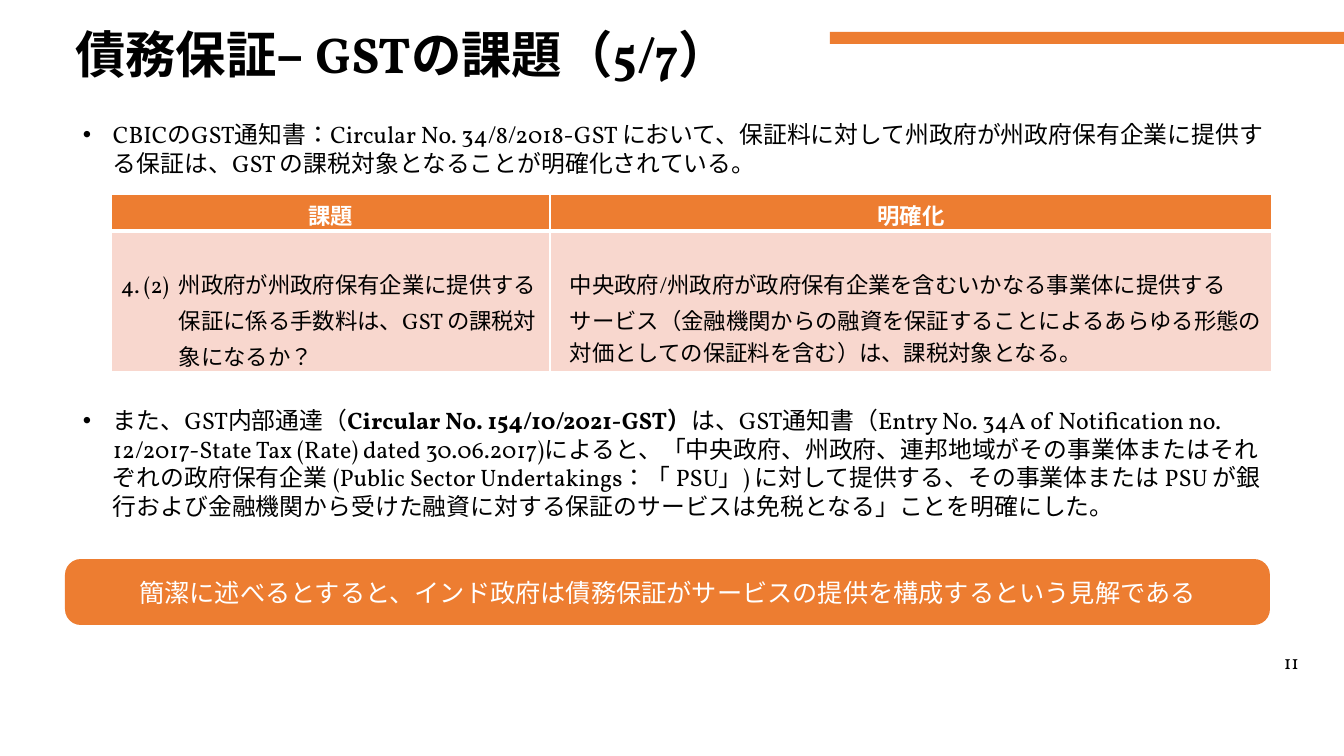
from lxml import etree
from pptx import Presentation
from pptx.dml.color import RGBColor
from pptx.enum.lang import MSO_LANGUAGE_ID
from pptx.enum.shapes import MSO_SHAPE
from pptx.enum.text import MSO_ANCHOR, PP_ALIGN
from pptx.oxml.ns import qn
from pptx.util import Pt

CENTER = PP_ALIGN.CENTER
LEFT = PP_ALIGN.LEFT
MIDDLE = MSO_ANCHOR.MIDDLE
TOP = MSO_ANCHOR.TOP
RECT = MSO_SHAPE.RECTANGLE
ROUNDED = MSO_SHAPE.ROUNDED_RECTANGLE
JAPANESE = MSO_LANGUAGE_ID.JAPANESE

# Content: text is a list of (words, bold) runs
TITLE = [("債務保証– GSTの課題（5/7）", True)]
POINTS = [
    (115, 80, [("CBICのGST通知書：Circular No. 34/8/2018-GST において、保証料に対して州政府が"
                "州政府保有企業に提供する保証は、GST の課税対象となることが明確化されている。", False)]),
    (401, 135, [("また、GST内部通達（", False),
                ("Circular No. 154/10/2021-GST）", True),
                ("は、GST通知書（Entry No. 34A of Notification no. 12/2017-State Tax (Rate) dated "
                 "30.06.2017)によると、「中央政府、州政府、連邦地域がその事業体またはそれぞれの政府保有企業 "
                 "(Public Sector Undertakings：「 PSU」) に対して提供する、その事業体または PSU が銀行および"
                 "金融機関から受けた融資に対する保証のサービスは免税となる」ことを明確にした。", False)]),
]
HEADINGS = ["課題", "明確化"]
ISSUE = "4. (2) \t州政府が州政府保有企業に提供する保証に係る手数料は、GST の課税対象になるか？"
CLARIFICATION = ("中央政府/州政府が政府保有企業を含むいかなる事業体に提供するサービス（金融機関からの融資を"
                 "保証することによるあらゆる形態の対価としての保証料を含む）は、課税対象となる。")
SUMMARY = "簡潔に述べるとすると、インド政府は債務保証がサービスの提供を構成するという見解である"
PAGE = "11"

FONT = "Vollkorn"
ORANGE, PINK, BLACK, WHITE = "ED7D31", "F8D7CE", "000000", "FFFFFF"
COLUMNS = [439, 722]
ROWS = [36, 141]


def px(n):
    return round(n * 914400 / 100.8)


def color(hex_code):
    return RGBColor.from_string(hex_code)


def write(frame, runs, size=17, ink=BLACK, align=LEFT, anchor=TOP, margins=(0, 0, 0, 0),
          spacing=None, left=0, hanging=0, bullet=None):
    """Fill a text frame with one formatted paragraph."""
    frame.word_wrap = True
    frame.vertical_anchor = anchor
    (frame.margin_left, frame.margin_top,
     frame.margin_right, frame.margin_bottom) = map(px, margins)
    paragraph = frame.paragraphs[0]
    paragraph.alignment = align
    if spacing:
        paragraph.line_spacing = spacing
    properties = paragraph._p.get_or_add_pPr()
    properties.set("marL", str(px(left)))
    properties.set("indent", str(-px(hanging)))
    if bullet:
        etree.SubElement(properties, qn("a:buFont")).set("typeface", "Arial")
        etree.SubElement(properties, qn("a:buChar")).set("char", bullet)
    for words, bold in runs:
        run = paragraph.add_run()
        run.text = words
        font = run.font
        font.name, font.size, font.bold = FONT, Pt(size), bold
        font.color.rgb = color(ink)
        font.language_id = JAPANESE


def add_block(kind, x, y, w, h):
    block = slide.shapes.add_shape(kind, px(x), px(y), px(w), px(h))
    block.shadow.inherit = False
    block.fill.solid()
    block.fill.fore_color.rgb = color(ORANGE)
    block.line.fill.background()
    return block


def add_text(x, y, w, h, runs, **style):
    box = slide.shapes.add_textbox(px(x), px(y), px(w), px(h))
    write(box.text_frame, runs, **style)


def style_cell(cell, fill, bottom):
    """Set the fill and the white borders; bottom is the lower border in points."""
    cell.fill.solid()
    cell.fill.fore_color.rgb = color(fill)
    properties = cell._tc.get_or_add_tcPr()
    for place, (side, width) in enumerate([("L", 1), ("R", 1), ("T", 1), ("B", bottom)]):
        border = etree.Element(qn("a:ln" + side), w=str(Pt(width)))
        solid = etree.SubElement(border, qn("a:solidFill"))
        etree.SubElement(solid, qn("a:srgbClr")).set("val", WHITE)
        properties.insert(place, border)


presentation = Presentation()
presentation.slide_width, presentation.slide_height = px(1344), px(756)
slide = presentation.slides.add_slide(presentation.slide_layouts[5])

# Title and accent bar
title = slide.shapes.title
title.left, title.top, title.width, title.height = px(65), px(1), px(1159), px(112)
write(title.text_frame, TITLE, size=36, anchor=MIDDLE, margins=(10, 5, 10, 5), spacing=0.9)
add_block(RECT, 830, 32, 514, 12)

# Bulleted points
for top, height, runs in POINTS:
    add_text(73, top, 1204, height, runs, margins=(10, 5, 10, 5), spacing=Pt(20.4),
             left=30, hanging=30, bullet="•")

# Issue table
table = slide.shapes.add_table(2, 2, px(111), px(194), px(sum(COLUMNS)), px(sum(ROWS))).table
for column, width in zip(table.columns, COLUMNS):
    column.width = px(width)
for row, height in zip(table.rows, ROWS):
    row.height = px(height)


def fill_cell(row, column, words, fill, bottom, bold=False, **style):
    cell = table.cell(row, column)
    write(cell.text_frame, [(words, bold)], size=16, **style)
    cell.margin_left = cell.margin_right = px(10)
    cell.margin_top, cell.margin_bottom = px(5 + 32 * row), px(5)
    style_cell(cell, fill, bottom)


for index, heading in enumerate(HEADINGS):
    fill_cell(0, index, heading, ORANGE, 3, bold=True, ink=WHITE, align=CENTER)
fill_cell(1, 0, ISSUE, PINK, 1, left=58, hanging=58)
fill_cell(1, 1, CLARIFICATION, PINK, 1, left=10)

# Summary banner and page number
banner = add_block(ROUNDED, 65, 559, 1205, 66)
banner.adjustments[0] = 0.24
write(banner.text_frame, [(SUMMARY, False)], size=18, ink=WHITE, align=CENTER, anchor=MIDDLE,
      margins=(10, 5, 10, 5))
add_text(1277, 650, 29, 34, [(PAGE, False)], size=14, align=CENTER)

presentation.save("out.pptx")
